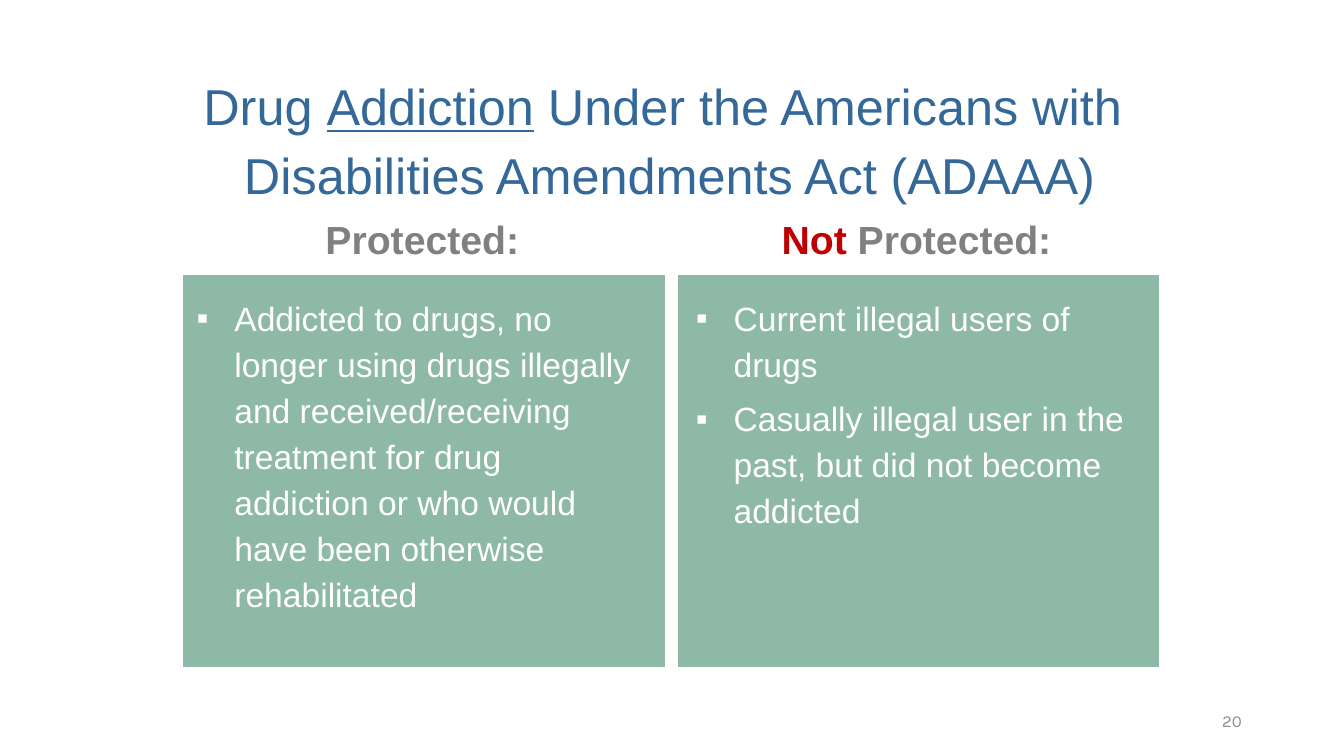
import pptx
import pptx.util
import pptx.dml.color
import pptx.enum.shapes
import pptx.enum.text
import pptx.oxml
import pptx.oxml.ns
from dataclasses import dataclass

Pt = pptx.util.Pt
Align = pptx.enum.text.PP_ALIGN
Anchor = pptx.enum.text.MSO_ANCHOR


@dataclass
class Theme:
    font: str = "Arial"
    small: str = "Karla"
    blue: str = "346898"
    green: str = "8DB9A6"
    red: str = "C00000"
    gray: str = "808080"
    pale: str = "8C8C8C"
    white: str = "FFFFFF"
    title: int = 36
    head: int = 28
    body: int = 24
    note: int = 12


theme = Theme()

# Each paragraph is a list of (text, run format) pairs.
title = [[
    ("Drug ", {}),
    ("Addiction", {"under": True}),
    (" Under the Americans with \nDisabilities Amendments Act (ADAAA)", {}),
]]
columns = [
    {
        "head": [[("Protected:", {})]],
        "items": [
            "Addicted to drugs, no longer using drugs illegally and "
            "received/receiving treatment for drug addiction or who would "
            "have been otherwise rehabilitated",
        ],
        "inset": 9.4,
    },
    {
        "head": [[("Not", {"color": theme.red}), (" Protected:", {})]],
        "items": [
            "Current illegal users of drugs",
            "Casually illegal user in the past, but did not become addicted",
        ],
        "inset": 13,
    },
]
number = "20"


def color(hue):
    return pptx.dml.color.RGBColor.from_string(hue)


def place(shape, left, top, width, height):
    shape.left, shape.top = Pt(left), Pt(top)
    shape.width, shape.height = Pt(width), Pt(height)


def add_bullet(para):
    """Give the paragraph a hanging square bullet."""
    props = para._p.get_or_add_pPr()
    props.set("marL", str(Pt(27)))
    props.set("indent", str(-Pt(27)))
    for tag, key, value in (("a:buFont", "typeface", theme.font),
                            ("a:buChar", "char", "▪")):
        node = pptx.oxml.xmlchemy.OxmlElement(tag)
        node.set(key, value)
        props.append(node)


def write(shape, paras, size, hue, font=theme.font, align=Align.LEFT,
          anchor=Anchor.TOP, inset=(0, 0), line=1.0, before=0,
          bold=False, bullet=False):
    """Fill a shape with paragraphs; inset is (sides, top and bottom)."""
    frame = shape.text_frame
    frame.word_wrap = True
    frame.auto_size = pptx.enum.text.MSO_AUTO_SIZE.NONE
    frame.vertical_anchor = anchor
    frame.margin_left = frame.margin_right = Pt(inset[0])
    frame.margin_top = frame.margin_bottom = Pt(inset[1])
    for i, runs in enumerate(paras):
        para = frame.add_paragraph() if i else frame.paragraphs[0]
        para.alignment = align
        para.line_spacing = line
        para.space_before = Pt(before)
        if bullet:
            add_bullet(para)
        for text, style in runs:
            for j, part in enumerate(text.split("\n")):
                if j:
                    para.add_line_break()
                run = para.add_run()
                run.text = part
                run.font.name = font
                run.font.size = Pt(size)
                run.font.bold = bold
                run.font.underline = style.get("under", False)
                run.font.color.rgb = color(style.get("color", hue))


def main():
    deck = pptx.Presentation()
    deck.slide_width, deck.slide_height = Pt(960), Pt(540)
    slide = deck.slides.add_slide(deck.slide_layouts.get_by_name("Comparison"))
    holders = slide.placeholders

    place(slide.shapes.title, 40.3, 36, 876.2, 121.7)
    write(slide.shapes.title, title, theme.title, theme.blue,
          align=Align.CENTER, anchor=Anchor.MIDDLE, line=1.14, before=6)

    left, top, width, height, step = 131, 196.6, 343.8, 280, 353
    for i, column in enumerate(columns):
        x = left + i * step
        panel = slide.shapes.add_shape(
            pptx.enum.shapes.MSO_SHAPE.FLOWCHART_PROCESS,
            Pt(x), Pt(top), Pt(width), Pt(height))
        panel.shadow.inherit = False
        panel.fill.solid()
        panel.fill.fore_color.rgb = color(theme.green)
        panel.line.fill.background()
        # Placeholders must lie in front of the panel.
        slide.shapes._spTree.remove(panel._element)
        slide.shapes._spTree.insert(2, panel._element)

        head, body = holders[2 * i + 1], holders[2 * i + 2]
        place(head, x, 150, 341.3, 41)
        write(head, column["head"], theme.head, theme.gray,
              align=Align.CENTER, inset=(7.2, 3.6), bold=True)
        place(body, x + column["inset"], 208.8, 318.2, 250)
        write(body, [[(item, {})] for item in column["items"]],
              theme.body, theme.white, line=1.14, before=6, bullet=True)

    page = slide.shapes.add_textbox(Pt(678.2), Pt(500.4), Pt(216), Pt(28.8))
    write(page, [[(number, {})]], theme.note, theme.pale, font=theme.small,
          align=Align.RIGHT, anchor=Anchor.MIDDLE, inset=(7.2, 3.6))
    deck.save("out.pptx")


if __name__ == "__main__":
    main()
